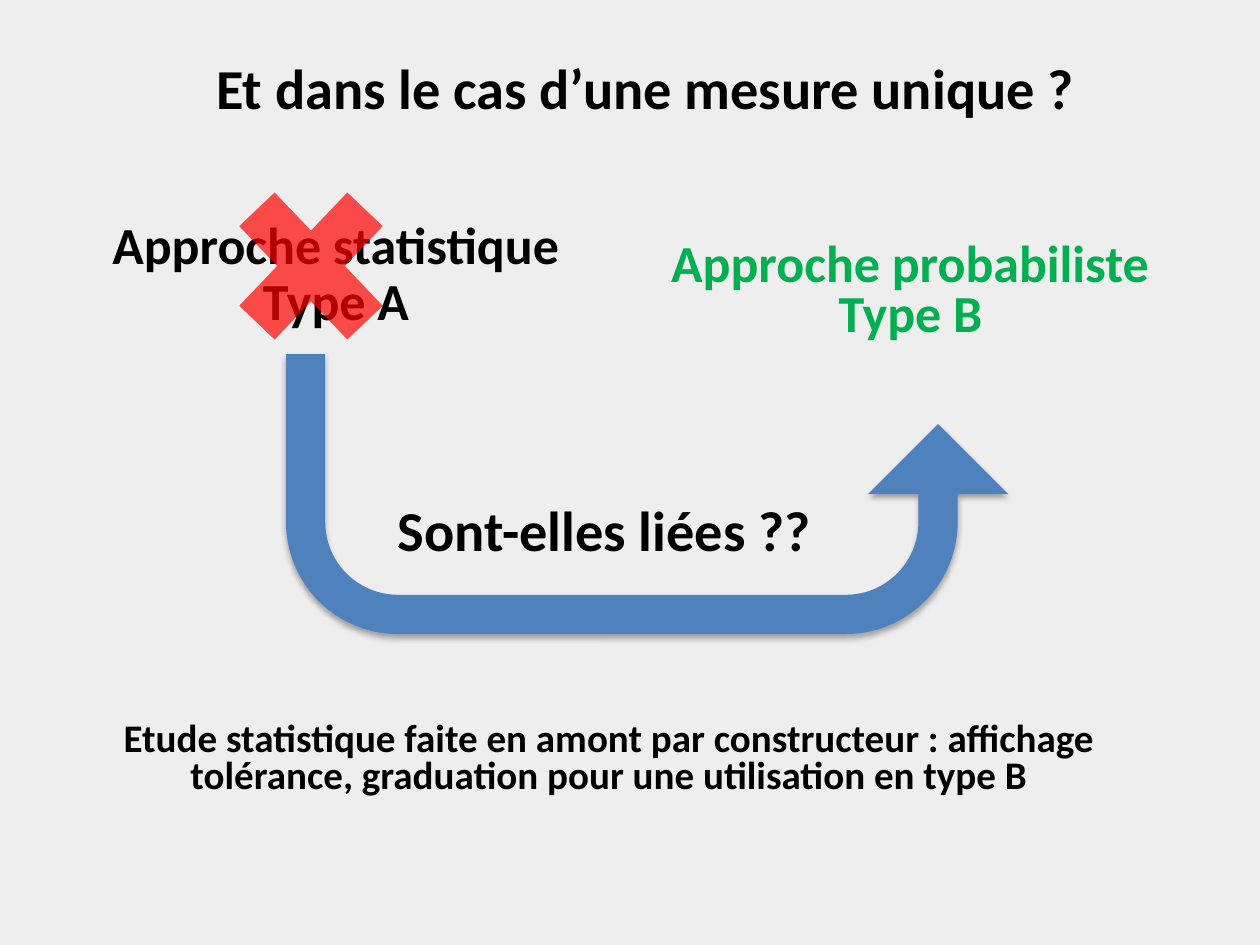
from lxml import etree
from pptx import Presentation
from pptx import util as u
from pptx.dml.color import RGBColor
from pptx.enum import shapes, text
from pptx.oxml.ns import qn

PX = 914400 / 126  # EMU in one px


def emu(px):
    return u.Emu(round(px * PX))


def rgb(color):
    return RGBColor.from_string(color)


def write(tf, lines, size=32.2, color="000000", bold=True, spacing=1.0, font="Calibri"):
    """Fill a text frame with centred paragraphs, one per line."""
    for i, line in enumerate(lines):
        p = tf.paragraphs[0] if i == 0 else tf.add_paragraph()
        p.alignment = text.PP_ALIGN.CENTER
        p.line_spacing = spacing
        r = p.add_run()
        r.text = line
        r.font.name = font
        r.font.size = u.Pt(size)
        r.font.bold = bold
        r.font.color.rgb = rgb(color)


class Board:
    """Holds the style and the current slide."""
    background = "EEEEEE"
    green = "00B050"
    red = "FF0000"
    blue = "4F81BD"

    def __init__(self, prs):
        self.s = prs.slides.add_slide(prs.slide_layouts[6])
        fill = self.s.background.fill
        fill.solid()
        fill.fore_color.rgb = rgb(self.background)

    def label(self, box, *lines, **style):
        sp = self.s.shapes.add_textbox(*map(emu, box))
        tf = sp.text_frame
        tf.word_wrap = True
        tf.vertical_anchor = text.MSO_ANCHOR.MIDDLE
        write(tf, lines, **style)

    def shape(self, kind, box, color, alpha=None):
        sp = self.s.shapes.add_shape(kind, *map(emu, box))
        sp.shadow.inherit = False
        sp.fill.solid()
        sp.fill.fore_color.rgb = rgb(color)
        sp.line.fill.background()
        if alpha is not None:
            clr = sp._element.spPr.find(qn("a:solidFill"))[0]
            etree.SubElement(clr, qn("a:alpha"), val=str(alpha * 1000))
        return sp

    def uturn(self, box, color, adjustments):
        sp = self.shape(shapes.MSO_SHAPE.U_TURN_ARROW, box, color)
        for i, value in enumerate(adjustments):
            sp.adjustments[i] = value
        # Turned and mirrored, so that the bend is at the bottom
        sp.rotation = 180
        spPr = sp._element.spPr
        spPr.find(qn("a:xfrm")).set("flipH", "1")
        # Soft shadow straight below
        shadow = etree.SubElement(
            spPr.find(qn("a:effectLst")), qn("a:outerShdw"),
            blurRad=str(u.Pt(3.5)), dist=str(u.Pt(2.2)), dir="5400000", rotWithShape="0")
        clr = etree.SubElement(shadow, qn("a:srgbClr"), val="000000")
        etree.SubElement(clr, qn("a:alpha"), val="32000")


def main():
    prs = Presentation()
    prs.slide_width, prs.slide_height = emu(1260), emu(945)
    board = Board(prs)

    # Title
    board.label((30, 42, 1230, 90), "Et dans le cas d’une mesure unique ?")

    # The two approaches
    board.label((0, 206, 672, 140), "Approche statistique", "Type A", size=29.7, spacing=0.9)
    board.label((561, 223, 699, 140), "Approche probabiliste", "Type B",
                size=29.7, spacing=0.8, color=board.green)

    # Question between them
    board.label((268, 484, 672, 90), "Sont-elles liées ??")

    # Cross over type A, and arrow from A to B
    board.shape(shapes.MSO_SHAPE.MATH_MULTIPLY, (207, 157, 208, 218), board.red, alpha=69)
    board.uturn((286, 354, 722, 280), board.blue, (0.14, 0.25, 0.25, 0.4, 0.75))

    # Conclusion
    board.label((88, 700, 1042, 120),
                "Etude statistique faite en amont par constructeur : affichage "
                "tolérance, graduation pour une utilisation en type B",
                size=22.3, spacing=0.8)

    prs.save("out.pptx")


if __name__ == "__main__":
    main()
